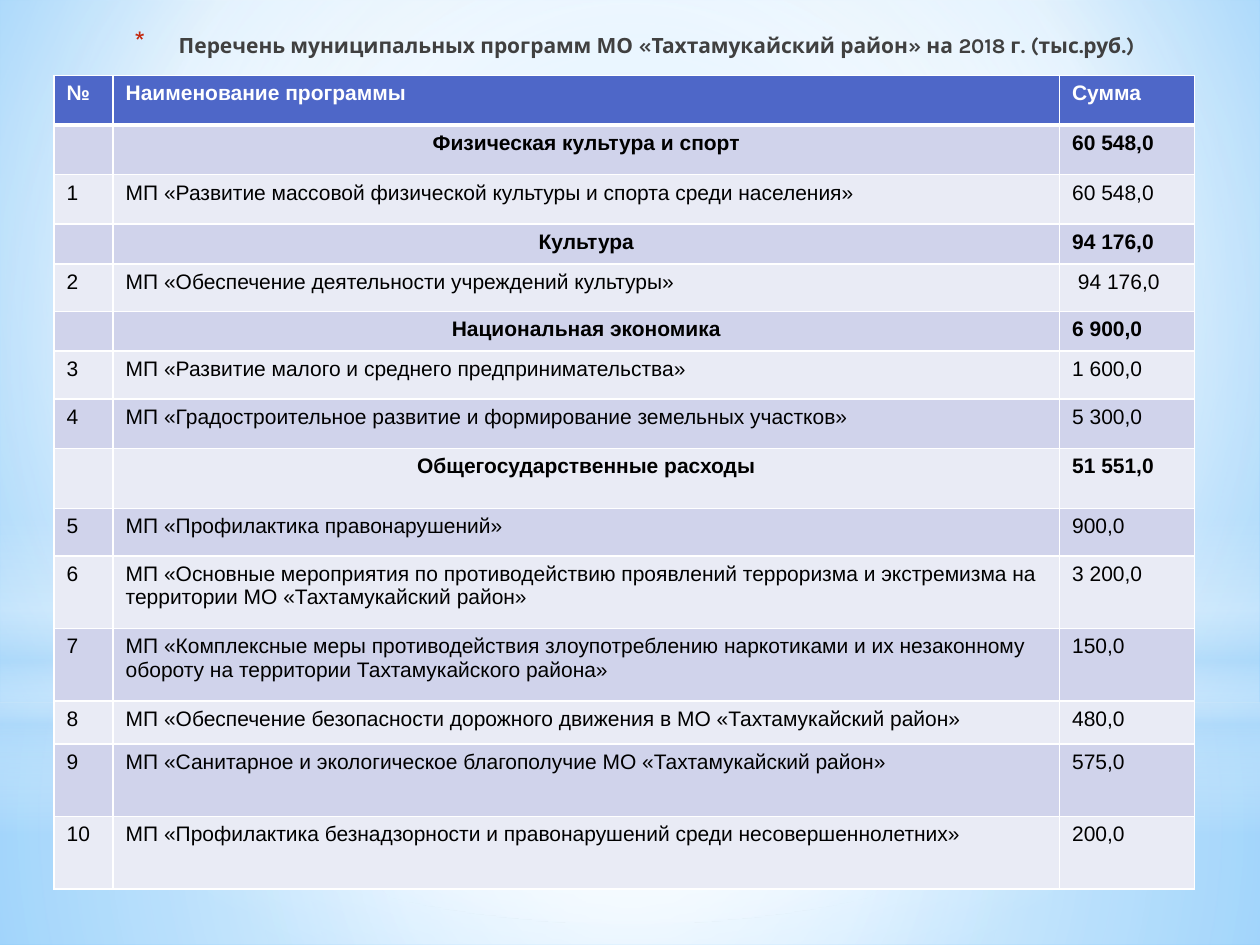
from lxml.etree import SubElement
from pptx import Presentation
from pptx.dml.color import RGBColor
from pptx.enum.shapes import MSO_SHAPE
from pptx.enum.text import MSO_ANCHOR, MSO_AUTO_SIZE, PP_ALIGN
from pptx.oxml import parse_xml
from pptx.oxml.ns import nsdecls, qn
from pptx.util import Cm, Pt

WHITE = RGBColor(0xFF, 0xFF, 0xFF)
BLACK = RGBColor(0, 0, 0)
GRAPHITE = RGBColor(0x40, 0x40, 0x40)
RED = RGBColor(0xC3, 0x26, 0x0C)
SKY = RGBColor(0x9E, 0xD5, 0xFF)
AZURE = RGBColor(0x5B, 0xB9, 0xFF)
MIST = RGBColor(0xB4, 0xDC, 0xFA)
INDIGO = RGBColor(0x4E, 0x67, 0xC8)
LILAC = RGBColor(0xD0, 0xD3, 0xEB)
PALE = RGBColor(0xE9, 0xEB, 0xF5)

CENTRE = (50, 50, 50, 50)
COLUMNS = (1.19, 19.08, 2.72)
HEADING = "Перечень муниципальных программ МО «Тахтамукайский район» на 2018 г. (тыс.руб.)"
PROGRAMMES = [
    (1.0, "№", "Наименование программы", "Сумма"),
    (1.0, "", "Физическая культура и спорт", "60 548,0"),
    (1.0, "1", "МП «Развитие массовой физической культуры и спорта среди населения»", "60 548,0"),
    (0.8, "", "Культура", "94 176,0"),
    (0.96, "2", "МП «Обеспечение деятельности учреждений культуры»", " 94 176,0"),
    (0.8, "", "Национальная экономика", "6 900,0"),
    (0.96, "3", "МП «Развитие малого и среднего предпринимательства»", "1 600,0"),
    (1.0, "4", "МП «Градостроительное развитие и формирование земельных участков»", "5 300,0"),
    (1.21, "", "Общегосударственные расходы", "51 551,0"),
    (0.96, "5", "МП «Профилактика правонарушений»", "900,0"),
    (1.46, "6", "МП «Основные мероприятия по противодействию проявлений терроризма "
                "и экстремизма на территории МО «Тахтамукайский район»", "3 200,0"),
    (1.46, "7", "МП «Комплексные меры противодействия злоупотреблению наркотиками "
                "и их незаконному обороту на территории Тахтамукайского района»", "150,0"),
    (0.87, "8", "МП «Обеспечение безопасности дорожного движения в МО «Тахтамукайский район»", "480,0"),
    (1.46, "9", "МП «Санитарное и экологическое благополучие МО «Тахтамукайский район»", "575,0"),
    (1.46, "10", "МП «Профилактика безнадзорности и правонарушений среди несовершеннолетних»", "200,0"),
]


class ProgrammeSlide:
    """Holds the text style and the slide being built."""

    def __init__(self, deck, font, size):
        self.slide = deck.slides.add_slide(deck.slide_layouts[5])
        self.font = font
        self.size = Pt(size)

    def gradient(self, fill, stops, focus=None):
        fill.solid()
        gradient = parse_xml(f'<a:gradFill {nsdecls("a")} rotWithShape="1"><a:gsLst/></a:gradFill>')
        for position, colour, opacity in stops:
            stop = SubElement(gradient[0], qn("a:gs"), pos=str(position * 1000))
            tint = SubElement(stop, qn("a:srgbClr"), val=str(colour))
            if opacity < 100:
                SubElement(tint, qn("a:alpha"), val=str(opacity * 1000))
        if focus:
            circle = SubElement(gradient, qn("a:path"))
            circle.set("path", "circle")
            edges = {side: str(share * 1000) for side, share in zip("ltrb", focus)}
            SubElement(circle, qn("a:fillToRect"), **edges)
        else:
            SubElement(gradient, qn("a:lin"), ang="5400000", scaled="0")
        owner = fill._xPr
        owner.replace(owner.find(qn("a:solidFill")), gradient)

    def background(self, stops, focus):
        self.gradient(self.slide.background.fill, stops, focus)

    def glow(self, preset, top, height, stops, focus=None):
        glow = self.slide.shapes.add_shape(preset, 0, Cm(top), Cm(25.4), Cm(height))
        glow.shadow.inherit = False
        glow.line.fill.background()
        self.gradient(glow.fill, stops, focus)

    def run(self, paragraph, text, colour, bold, font=None):
        run = paragraph.add_run()
        run.text = text
        run.font.name = font or self.font
        run.font.size = self.size
        run.font.bold = bold
        run.font.color.rgb = colour

    def title(self, text, left, top, width, height):
        title = self.slide.shapes.title
        self.slide.shapes._spTree.append(title._element)
        title.left, title.top, title.width, title.height = map(Cm, (left, top, width, height))
        frame = title.text_frame
        frame.word_wrap = True
        frame.auto_size = MSO_AUTO_SIZE.NONE
        frame.vertical_anchor = MSO_ANCHOR.TOP
        paragraph = frame.paragraphs[0]
        paragraph.alignment = PP_ALIGN.CENTER
        self.run(paragraph, text, GRAPHITE, True, "Karla")
        props = paragraph._p.get_or_add_pPr()
        props.set("marL", str(Cm(0.89)))
        props.set("indent", str(-Cm(0.89)))
        SubElement(SubElement(props, qn("a:buClr")), qn("a:srgbClr"), val=str(RED))
        SubElement(props, qn("a:buSzPct"), val="128000")
        SubElement(props, qn("a:buChar"), char="*")

    def cell(self, cell, text, fill, colour, bold, centred, bottom):
        cell.fill.solid()
        cell.fill.fore_color.rgb = fill
        borders = (("lnL", 1), ("lnR", 1), ("lnT", 1), ("lnB", bottom))
        for place, (side, weight) in enumerate(borders):
            border = parse_xml(
                f'<a:{side} {nsdecls("a")} w="{Pt(weight)}"><a:solidFill>'
                f'<a:srgbClr val="{WHITE}"/></a:solidFill></a:{side}>')
            cell._tc.tcPr.insert(place, border)
        paragraph = cell.text_frame.paragraphs[0]
        if centred:
            paragraph.alignment = PP_ALIGN.CENTER
        if text:
            self.run(paragraph, text, colour, bold)
        else:
            SubElement(paragraph._p, qn("a:endParaRPr"), sz=str(int(self.size.pt * 100)))

    def table(self, rows, columns, left, top):
        height = sum(row[0] for row in rows)
        table = self.slide.shapes.add_table(
            len(rows), len(columns), Cm(left), Cm(top), Cm(sum(columns)), Cm(height)).table
        for column, width in zip(table.columns, columns):
            column.width = Cm(width)
        for index, (row_height, *texts) in enumerate(rows):
            table.rows[index].height = Cm(row_height)
            header, section = index == 0, not texts[0]
            fill = INDIGO if header else (LILAC if index % 2 else PALE)
            for place, text in enumerate(texts):
                self.cell(table.cell(index, place), text, fill,
                          WHITE if header else BLACK, header or section,
                          section and place == 1, 3 if header else 1)


def main():
    deck = Presentation()
    deck.slide_width, deck.slide_height = Cm(25.4), Cm(19.05)
    page = ProgrammeSlide(deck, "Arial", 12)
    page.background([(0, SKY, 100), (60, WHITE, 100), (100, AZURE, 100)], (20, 10, 20, 60))
    page.glow(MSO_SHAPE.RECTANGLE, 14.17, 4.88,
              [(0, WHITE, 91), (37, WHITE, 76), (100, MIST, 79)], CENTRE)
    page.glow(MSO_SHAPE.RECTANGLE, 0, 14.17,
              [(0, WHITE, 89), (48, WHITE, 62), (100, MIST, 79)], CENTRE)
    page.glow(MSO_SHAPE.RECTANGLE, 10.46, 6.35,
              [(0, WHITE, 0), (29, WHITE, 30), (45, MIST, 40),
               (55, WHITE, 26), (65, MIST, 60), (100, WHITE, 0)])
    page.glow(MSO_SHAPE.OVAL, 4.45, 14.17, [(0, WHITE, 100), (56, WHITE, 0)], CENTRE)
    page.title(HEADING, 1.7, 0.53, 22.2, 1.22)
    page.table(PROGRAMMES, COLUMNS, 1.09, 1.52)
    deck.save("out.pptx")


if __name__ == "__main__":
    main()
